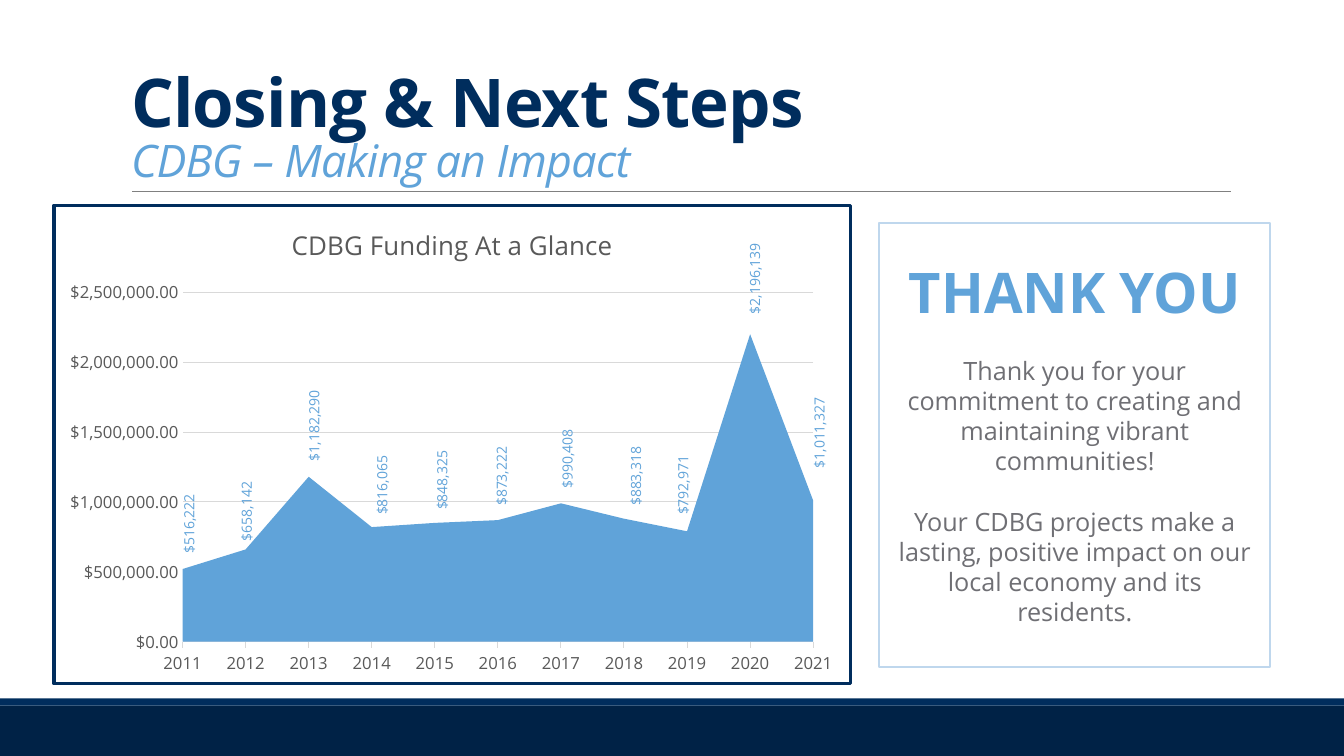
from dataclasses import dataclass
from lxml import etree
from pptx import Presentation
from pptx.chart.data import CategoryChartData
from pptx.dml.color import RGBColor
from pptx.enum.chart import XL_CHART_TYPE as ChartType, XL_TICK_MARK as Tick
from pptx.enum.shapes import MSO_CONNECTOR as Connector, MSO_SHAPE as Shape
from pptx.enum.text import MSO_ANCHOR as Anchor, MSO_AUTO_SIZE as AutoSize, PP_ALIGN as Align
from pptx.oxml import parse_xml
from pptx.oxml.ns import nsdecls, qn
from pptx.util import Inches, Pt

FONT = "Open Sans"
COLORS = {
    "navy": "002D5D", "deep": "002246", "sky": "60A3D9", "pale": "BFD7ED",
    "rule": "808080", "body": "6F6F74", "axis": "595959", "grid": "D9D9D9",
    "white": "FFFFFF",
}
CHART_TITLE = "CDBG Funding At a Glance"
CHART_WIDTH, CHART_HEIGHT = 7.93, 4.78
PLOT = {
    "x": 1.28 / CHART_WIDTH, "y": 0.87 / CHART_HEIGHT,
    "w": 6.28 / CHART_WIDTH, "h": 3.49 / CHART_HEIGHT,
}


@dataclass
class Band:
    top: float
    height: float
    color: str


@dataclass
class Funding:
    year: int
    amount: int
    left: float
    top: float
    width: float = 0.95


@dataclass
class Paragraph:
    text: str
    size: float
    color: str
    bold: bool
    before: float


BANDS = [Band(7, 0.5, "deep"), Band(6.93, 0.07, "navy")]
FUNDING = [
    Funding(2011, 516222, 1.4, 5.06),
    Funding(2012, 658142, 1.97, 4.94),
    Funding(2013, 1182290, 2.64, 4.09),
    Funding(2014, 816065, 3.36, 4.68, 0.86),
    Funding(2015, 848325, 3.91, 4.63),
    Funding(2016, 873222, 4.5, 4.59),
    Funding(2017, 990408, 5.15, 4.42),
    Funding(2018, 883318, 5.83, 4.59),
    Funding(2019, 792971, 6.3, 4.68),
    Funding(2020, 2196139, 7.01, 2.63),
    Funding(2021, 1011327, 7.65, 4.16),
]
THANKS = [
    Paragraph("THANK YOU", 40, "sky", True, 0),
    Paragraph("Thank you for your commitment to creating and maintaining "
              "vibrant communities!", 18, "body", False, 22),
    Paragraph("Your CDBG projects make a lasting, positive impact on our "
              "local economy and its residents.", 18, "body", False, 21.5),
]


def rgb(name: str) -> RGBColor:
    return RGBColor.from_string(COLORS[name])


def set_font(font, size: float, color: str, bold: bool = False, italic: bool = False) -> None:
    values = {"name": FONT, "size": Pt(size), "bold": bold, "italic": italic}
    for key, value in values.items():
        setattr(font, key, value)
    font.color.rgb = rgb(color)


def set_line(line, color: str, width: float) -> None:
    line.color.rgb = rgb(color)
    line.width = Pt(width)


def add_band(s, band: Band) -> None:
    sp = s.shapes.add_shape(Shape.RECTANGLE, 0, Inches(band.top),
                            Inches(13.33), Inches(band.height))
    sp.shadow.inherit = False
    sp.fill.solid()
    sp.fill.fore_color.rgb = rgb(band.color)
    sp.line.fill.background()


def add_rule(s) -> None:
    rule = s.shapes.add_connector(Connector.STRAIGHT, Inches(1.31), Inches(1.9),
                                  Inches(12.21), Inches(1.9))
    set_line(rule.line, "rule", 0.5)
    etree.SubElement(rule._element.spPr, qn("a:effectLst"))


def fill_title(s) -> None:
    sp = s.shapes.title
    sp.left, sp.top, sp.width, sp.height = map(Inches, (1.2, 0.31, 11, 1.59))
    tf = sp.text_frame
    values = {"vertical_anchor": Anchor.BOTTOM, "word_wrap": True, "auto_size": AutoSize.NONE}
    for key, value in values.items():
        setattr(tf, key, value)
    p = tf.paragraphs[0]
    p.alignment, p.line_spacing = Align.LEFT, 0.85
    heading = p.add_run()
    heading.text = "Closing & Next Steps"
    set_font(heading.font, 48, "navy", bold=True)
    p.add_line_break()
    subtitle = p.add_run()
    subtitle.text = "CDBG – Making an Impact"
    set_font(subtitle.font, 32, "sky", italic=True)
    for r in (heading, subtitle):
        r.font._element.set("spc", "-50")


def add_thanks(s) -> None:
    sp = s.shapes.add_shape(Shape.RECTANGLE, Inches(8.72), Inches(2.21),
                            Inches(3.88), Inches(4.41))
    sp.shadow.inherit = False
    sp.fill.background()
    set_line(sp.line, "pale", 1.5)
    tf = sp.text_frame
    tf.word_wrap, tf.vertical_anchor, tf.margin_top = True, Anchor.TOP, Inches(0.34)
    for i, item in enumerate(THANKS):
        p = tf.add_paragraph() if i else tf.paragraphs[0]
        p.alignment, p.space_before = Align.CENTER, Pt(item.before)
        r = p.add_run()
        r.text = item.text
        set_font(r.font, item.size, item.color, item.bold)


def add_funding_chart(s) -> None:
    data = CategoryChartData()
    data.categories = [str(f.year) for f in FUNDING]
    data.add_series(CHART_TITLE, [round(f.amount, -4) for f in FUNDING])
    chart = s.shapes.add_chart(ChartType.AREA_STACKED, Inches(0.52), Inches(2.02),
                               Inches(CHART_WIDTH), Inches(CHART_HEIGHT), data).chart
    chart.has_legend = False
    chart.font.name, chart.font.size = FONT, Pt(10)
    chart.has_title = True
    r = chart.chart_title.text_frame.paragraphs[0].add_run()
    r.text = CHART_TITLE
    set_font(r.font, 18.6, "axis")
    chart.plots[0].vary_by_categories = False
    fill = chart.plots[0].series[0].format.fill
    fill.solid()
    fill.fore_color.rgb = rgb("sky")

    years, dollars = chart.category_axis, chart.value_axis
    for axis, tick in ((years, Tick.OUTSIDE), (dollars, Tick.NONE)):
        axis.major_tick_mark, axis.minor_tick_mark = tick, Tick.NONE
        set_font(axis.tick_labels.font, 12, "axis")
    years.has_major_gridlines = False
    set_line(years.format.line, "grid", 0.75)
    dollars.minimum_scale, dollars.maximum_scale, dollars.major_unit = 0, 2500000, 500000
    dollars.has_major_gridlines = True
    set_line(dollars.major_gridlines.format.line, "grid", 0.75)
    dollars.format.line.fill.background()
    dollars.tick_labels.number_format = '"$"#,##0.00'
    dollars.tick_labels.number_format_is_linked = False
    dollars._element.find(qn("c:crossBetween")).set("val", "midCat")

    space = chart._chartSpace
    plot_area = space.find(".//" + qn("c:plotArea"))
    for old in plot_area.findall(qn("c:layout")):
        plot_area.remove(old)
    sizes = "".join(f'<c:{key} val="{value}"/>' for key, value in PLOT.items())
    plot_area.insert(0, parse_xml(
        f'<c:layout {nsdecls("c")}><c:manualLayout><c:layoutTarget val="inner"/>'
        f'<c:xMode val="edge"/><c:yMode val="edge"/>{sizes}</c:manualLayout></c:layout>'))
    space.find(qn("c:chart")).addnext(parse_xml(
        f'<c:spPr {nsdecls("c", "a")}><a:solidFill><a:srgbClr val="{COLORS["white"]}"/></a:solidFill>'
        f'<a:ln w="{Pt(2.25)}"><a:solidFill><a:srgbClr val="{COLORS["navy"]}"/></a:solidFill></a:ln></c:spPr>'))


def add_amount(s, funding: Funding) -> None:
    sp = s.shapes.add_textbox(Inches(funding.left), Inches(funding.top),
                              Inches(funding.width), Inches(0.27))
    sp.rotation = 270
    sp.text_frame.word_wrap = True
    p = sp.text_frame.paragraphs[0]
    p.alignment = Align.CENTER
    r = p.add_run()
    r.text = f"${funding.amount:,}"
    set_font(r.font, 10, "sky")


def main() -> None:
    prs = Presentation()
    prs.slide_width, prs.slide_height = Inches(13.33), Inches(7.5)
    s = prs.slides.add_slide(prs.slide_layouts[5])
    for band in BANDS:
        add_band(s, band)
    add_rule(s)
    fill_title(s)
    add_thanks(s)
    add_funding_chart(s)
    for funding in FUNDING:
        add_amount(s, funding)
    prs.save("out.pptx")


if __name__ == "__main__":
    main()
